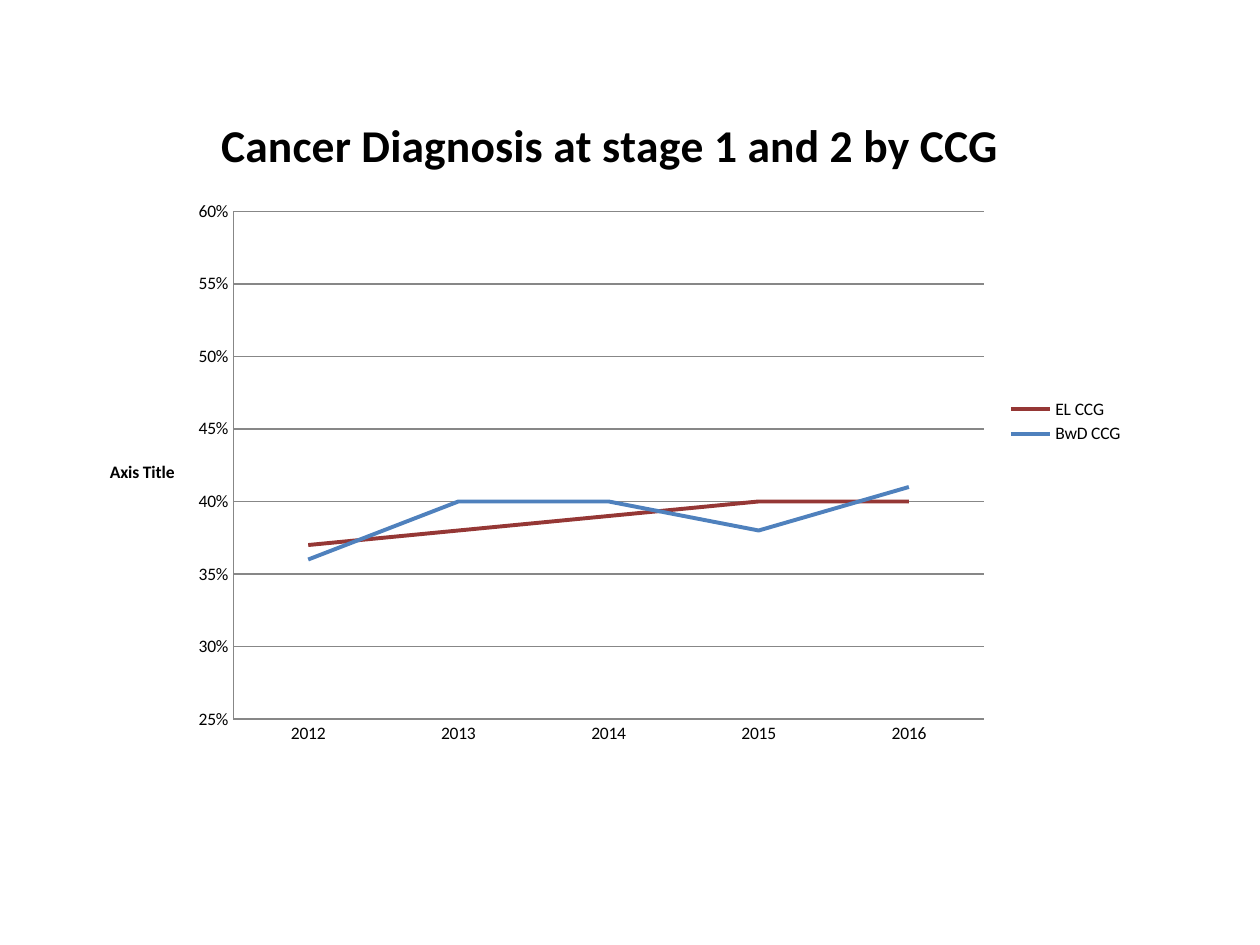
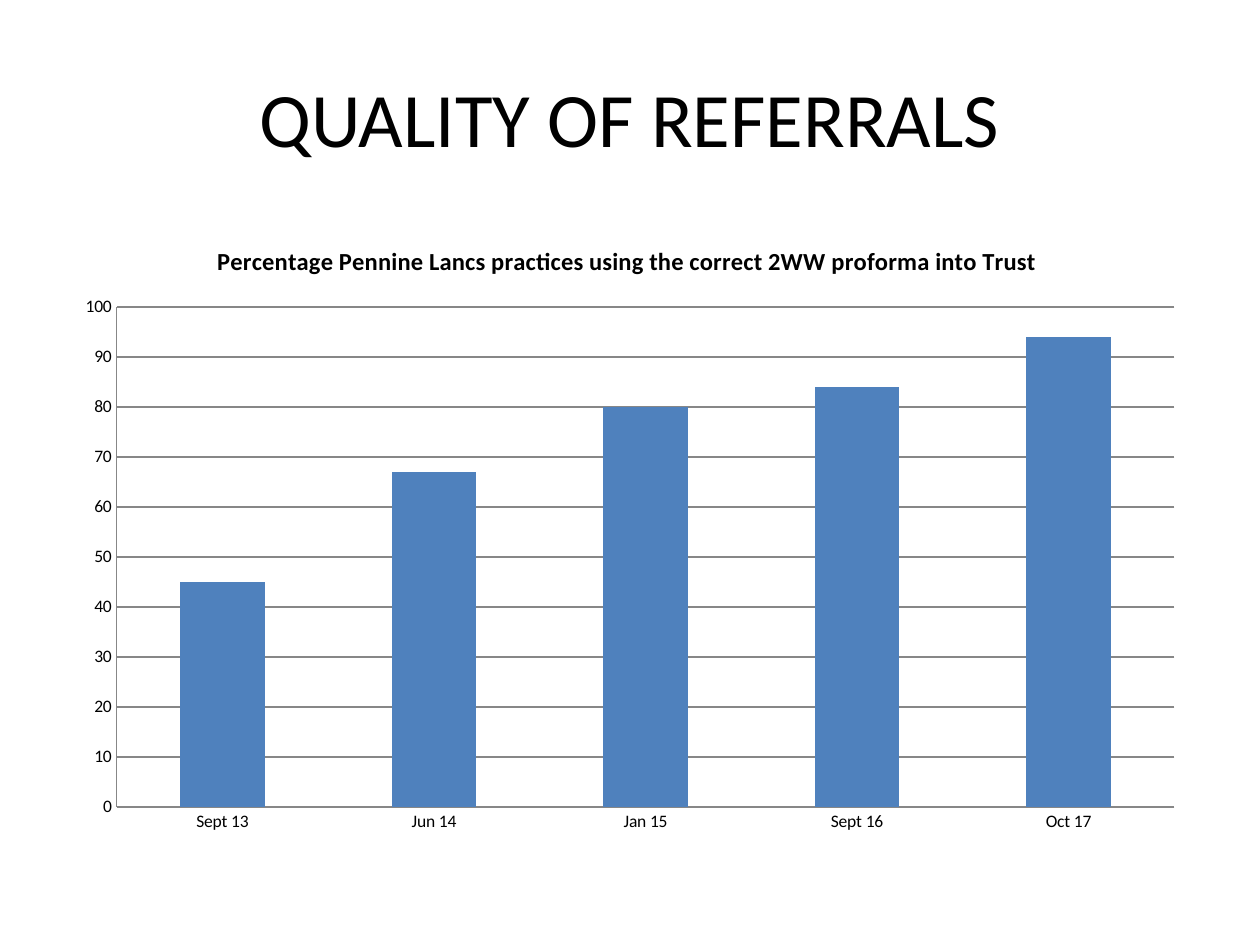
from dataclasses import dataclass
from typing import Optional

from pptx import Presentation
from pptx import util as u
from pptx.chart.chart import Chart
from pptx.chart.data import CategoryChartData
from pptx.dml.color import RGBColor
from pptx.enum import chart as charts, text
from pptx.oxml.ns import qn
from pptx.text.text import Font, TextFrame

FONT = "Calibri"
COLORS = {
    "text": "000000",
    "grid": "878787",
    "red": "953735",
    "blue": "4F81BD",
}


@dataclass(frozen=True)
class Box:
    left: float
    top: float
    width: float
    height: float

    def lengths(self) -> tuple[u.Length, ...]:
        return tuple(u.Inches(side) for side in (self.left, self.top, self.width, self.height))


@dataclass(frozen=True)
class Series:
    name: str
    values: tuple[float, ...]
    color: str


@dataclass(frozen=True)
class ChartSpec:
    kind: charts.XL_CHART_TYPE
    box: Box
    title: str
    title_size: int
    categories: tuple[str, ...]
    series: tuple[Series, ...]
    low: float
    high: float
    step: float
    number_format: str = "General"
    axis_title: Optional[str] = None
    legend: bool = False


DIAGNOSIS = ChartSpec(
    kind=charts.XL_CHART_TYPE.LINE,
    box=Box(0.67, 0.68, 8.35, 5.33),
    title="Cancer Diagnosis at stage 1 and 2 by CCG",
    title_size=26,
    categories=("2012", "2013", "2014", "2015", "2016"),
    series=(
        Series("EL CCG", (0.37, 0.38, 0.39, 0.4, 0.4), "red"),
        Series("BwD CCG", (0.36, 0.4, 0.4, 0.38, 0.41), "blue"),
    ),
    low=0.25,
    high=0.6,
    step=0.05,
    number_format="0%",
    axis_title="Axis Title",
    legend=True,
)

REFERRALS = ChartSpec(
    kind=charts.XL_CHART_TYPE.COLUMN_CLUSTERED,
    box=Box(0.5, 1.75, 9, 4.95),
    title="Percentage Pennine Lancs practices using the correct 2WW proforma into Trust ",
    title_size=14,
    categories=("Sept 13", "Jun 14", "Jan 15", "Sept 16", "Oct 17"),
    series=(Series("Series 1", (45, 67, 80, 84, 94), "blue"),),
    low=0,
    high=100,
    step=10,
)


def rgb(name: str) -> RGBColor:
    return RGBColor.from_string(COLORS[name])


def style_font(font: Font, size: int, bold: bool = False) -> None:
    font.name = FONT
    font.size = u.Pt(size)
    font.bold = bold
    font.color.rgb = rgb("text")


def add_run(frame: TextFrame, words: str, size: int, bold: bool = False) -> None:
    para = frame.paragraphs[0]
    para.alignment = text.PP_ALIGN.CENTER
    span = para.add_run()
    span.text = words
    style_font(span.font, size, bold)


def style_line(line, color: str, width: float) -> None:
    line.color.rgb = rgb(color)
    line.width = u.Pt(width)


def style_axes(chart: Chart, spec: ChartSpec) -> None:
    values = chart.value_axis
    for axis in (chart.category_axis, values):
        axis.major_tick_mark = charts.XL_TICK_MARK.NONE
        axis.minor_tick_mark = charts.XL_TICK_MARK.NONE
        style_line(axis.format.line, "grid", 0.75)
    values.minimum_scale = spec.low
    values.maximum_scale = spec.high
    values.major_unit = spec.step
    values.has_major_gridlines = True
    style_line(values.major_gridlines.format.line, "grid", 0.75)
    values.tick_labels.number_format = spec.number_format
    values.tick_labels.number_format_is_linked = False
    if spec.axis_title:
        frame = values.axis_title.text_frame
        add_run(frame, spec.axis_title, 10, bold=True)
        body = frame._element.find(qn("a:bodyPr"))
        body.set("rot", "0")
        body.set("vert", "horz")


def add_chart(page, spec: ChartSpec) -> None:
    data = CategoryChartData()
    data.categories = spec.categories
    for series in spec.series:
        data.add_series(series.name, series.values)
    chart = page.shapes.add_chart(spec.kind, *spec.box.lengths(), data).chart
    style_font(chart.font, 10)
    chart.has_title = True
    add_run(chart.chart_title.text_frame, spec.title, spec.title_size, bold=True)
    chart.has_legend = spec.legend
    if spec.legend:
        chart.legend.position = charts.XL_LEGEND_POSITION.RIGHT
        chart.legend.include_in_layout = False
    style_axes(chart, spec)

    plot = chart.plots[0]
    plot.vary_by_categories = False
    is_line = spec.kind == charts.XL_CHART_TYPE.LINE
    if not is_line:
        plot.gap_width = 150
    for drawn, series in zip(plot.series, spec.series):
        if is_line:
            drawn.smooth = False
            style_line(drawn.format.line, series.color, 2.25)
        else:
            drawn.format.fill.solid()
            drawn.format.fill.fore_color.rgb = rgb(series.color)


def set_title(page, words: str) -> None:
    title = page.shapes.title
    title.left, title.top, title.width, title.height = Box(0.5, 0.3, 9, 1.25).lengths()
    title.text_frame.vertical_anchor = text.MSO_ANCHOR.MIDDLE
    add_run(title.text_frame, words, 44)


def main() -> None:
    deck = Presentation()
    deck.slide_width = u.Inches(10)
    deck.slide_height = u.Inches(7.5)
    title_only, blank = deck.slide_layouts[5], deck.slide_layouts[6]

    add_chart(deck.slides.add_slide(blank), DIAGNOSIS)

    page = deck.slides.add_slide(title_only)
    set_title(page, "QUALITY OF REFERRALS")
    add_chart(page, REFERRALS)

    deck.save("out.pptx")


if __name__ == "__main__":
    main()
